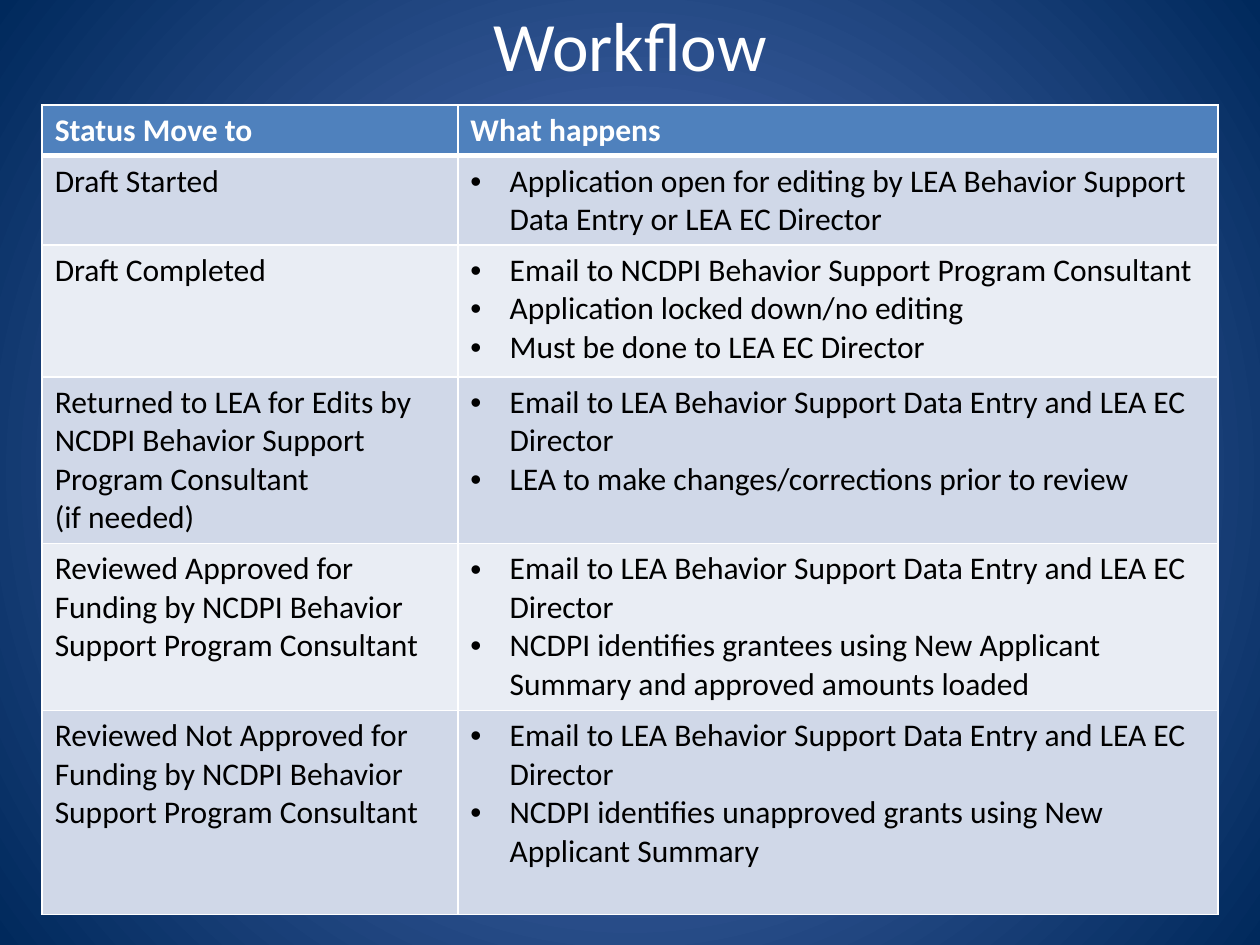
import pptx
import pptx.dml.color
import pptx.enum.text
import pptx.oxml
import pptx.oxml.ns
import pptx.util
from pptx.util import Cm

RGBColor = pptx.dml.color.RGBColor
WHITE = RGBColor(0xFF, 0xFF, 0xFF)
BLACK = RGBColor(0x00, 0x00, 0x00)
GLOW_BLUE = RGBColor(0x5E, 0x7C, 0xC5)
NAVY = RGBColor(0x00, 0x29, 0x5C)
HEADER_BLUE = RGBColor(0x4F, 0x81, 0xBD)
BAND_DARK = RGBColor(0xD0, 0xD8, 0xE8)
BAND_LIGHT = RGBColor(0xE9, 0xED, 0xF4)

HEADINGS = ["Status Move to", "What happens"]
EMAIL_LEA = "Email to LEA Behavior Support Data Entry and LEA EC Director"
STEPS = [
    (["Draft Started"],
     ["Application open for editing by LEA Behavior Support Data Entry or LEA EC Director"]),
    (["Draft Completed"],
     ["Email to NCDPI Behavior Support Program Consultant",
      "Application locked down/no editing",
      "Must be done to LEA EC Director"]),
    (["Returned to LEA for Edits by NCDPI Behavior Support Program Consultant",
      "(if needed)"],
     [EMAIL_LEA, "LEA to make changes/corrections prior to review"]),
    (["Reviewed Approved for Funding by NCDPI Behavior Support Program Consultant"],
     [EMAIL_LEA,
      "NCDPI identifies grantees using New Applicant Summary and approved amounts loaded"]),
    (["Reviewed Not Approved for Funding by NCDPI Behavior Support Program Consultant"],
     [EMAIL_LEA, "NCDPI identifies unapproved grants using New Applicant Summary"]),
]
COLUMN_WIDTHS = [8.38, 15.32]
ROW_HEIGHTS = [1.02, 1.8, 2.66, 3.36, 3.36, 4.12]


def xml(tag, content="", attributes=""):
    return pptx.oxml.parse_xml(
        f'<a:{tag} {pptx.oxml.ns.nsdecls("a")} {attributes}>{content}</a:{tag}>')


def write(frame, lines, size=18, color=BLACK, bold=False, align=None, bullet=False):
    """Fill a text frame with one paragraph per line."""
    frame.word_wrap = True
    for index, line in enumerate(lines):
        paragraph = frame.paragraphs[0] if index == 0 else frame.add_paragraph()
        paragraph.alignment = align
        run = paragraph.add_run()
        run.text = line
        run.font.name = "Calibri"
        run.font.size = pptx.util.Pt(size)
        run.font.bold = bold
        run.font.color.rgb = color
        if bullet:
            properties = paragraph._p.get_or_add_pPr()
            indent = Cm(0.79)
            properties.set("marL", str(indent))
            properties.set("indent", str(-indent))
            properties.append(xml("buFont", attributes='typeface="Arial"'))
            properties.append(xml("buChar", attributes='char="•"'))


class SlideBuilder:
    def __init__(self, slide):
        self.slide = slide

    def background(self, center, edge):
        fill = self.slide.background.fill
        fill.gradient()
        for stop, color in zip(fill.gradient_stops, (center, edge)):
            stop.color.rgb = color
        gradient = self.slide.element.find(".//" + pptx.oxml.ns.qn("a:gradFill"))
        gradient.replace(
            gradient.find(pptx.oxml.ns.qn("a:lin")),
            xml("path", '<a:fillToRect l="50000" t="50000" r="50000" b="50000"/>',
                'path="circle"'))

    def title(self, text, left, top, width, height):
        frame = self.slide.shapes.add_textbox(
            Cm(left), Cm(top), Cm(width), Cm(height)).text_frame
        frame.vertical_anchor = pptx.enum.text.MSO_ANCHOR.MIDDLE
        write(frame, [text], size=39.6, color=WHITE,
              align=pptx.enum.text.PP_ALIGN.CENTER)

    def cell(self, cell, lines, fill, top=1, bottom=1, **text_format):
        """Style one table cell; top and bottom are border widths in points."""
        cell.fill.solid()
        cell.fill.fore_color.rgb = fill
        properties = cell._tc.get_or_add_tcPr()
        for index, (side, width) in enumerate(
                [("L", 1), ("R", 1), ("T", top), ("B", bottom)]):
            properties.insert(index, xml(
                f"ln{side}",
                f'<a:solidFill><a:srgbClr val="{WHITE}"/></a:solidFill>',
                f'w="{pptx.util.Pt(width)}"'))
        write(cell.text_frame, lines, **text_format)

    def workflow_table(self, left, top):
        table = self.slide.shapes.add_table(
            len(ROW_HEIGHTS), len(COLUMN_WIDTHS), Cm(left), Cm(top),
            Cm(sum(COLUMN_WIDTHS)), Cm(sum(ROW_HEIGHTS))).table
        for column, width in zip(table.columns, COLUMN_WIDTHS):
            column.width = Cm(width)
        for row, height in zip(table.rows, ROW_HEIGHTS):
            row.height = Cm(height)
        for column, heading in enumerate(HEADINGS):
            self.cell(table.cell(0, column), [heading], HEADER_BLUE, bottom=3,
                      color=WHITE, bold=True)
        for row, step in enumerate(STEPS, start=1):
            for column, lines in enumerate(step):
                self.cell(table.cell(row, column), lines,
                          BAND_DARK if row % 2 else BAND_LIGHT,
                          top=3 if row == 1 else 1, bullet=column == 1)


def main():
    presentation = pptx.Presentation()
    presentation.slide_width, presentation.slide_height = Cm(25.4), Cm(19.05)
    builder = SlideBuilder(
        presentation.slides.add_slide(presentation.slide_layouts[6]))
    builder.background(GLOW_BLUE, NAVY)
    builder.title("Workflow", 1.27, 0.08, 22.86, 1.6)
    builder.workflow_table(0.85, 2.12)
    presentation.save("out.pptx")


if __name__ == "__main__":
    main()
